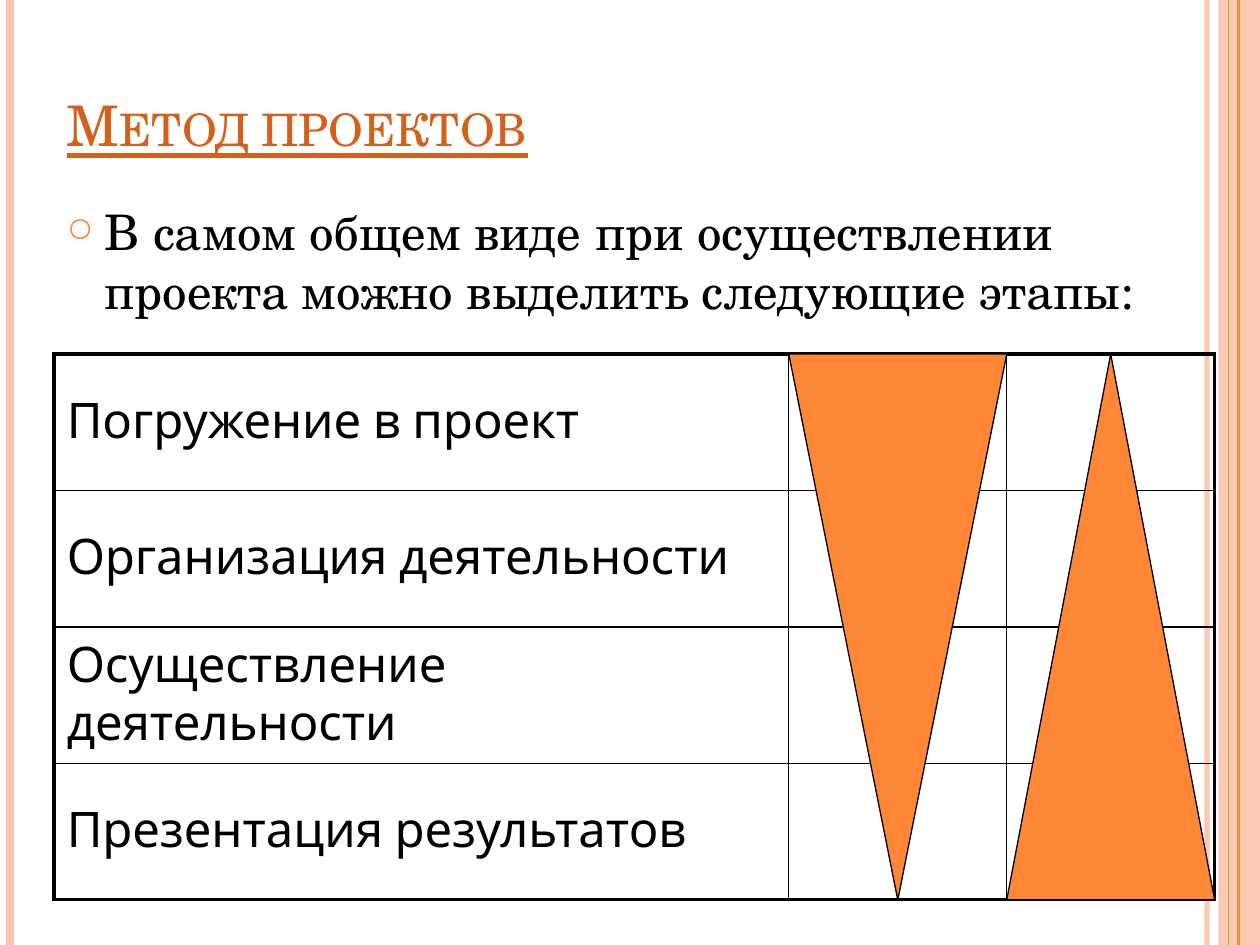
from lxml import etree
from pptx import Presentation
from pptx.dml.color import RGBColor
from pptx.enum.shapes import MSO_CONNECTOR, MSO_SHAPE
from pptx.enum.text import MSO_ANCHOR, PP_ALIGN
from pptx.oxml.ns import qn
from pptx.util import Inches, Pt

STRAIGHT = MSO_CONNECTOR.STRAIGHT
RECTANGLE = MSO_SHAPE.RECTANGLE
TRIANGLE = MSO_SHAPE.ISOSCELES_TRIANGLE
MIDDLE, BOTTOM = MSO_ANCHOR.MIDDLE, MSO_ANCHOR.BOTTOM
LEFT = PP_ALIGN.LEFT

ORANGE = RGBColor(0xFE, 0x86, 0x37)
PEACH = RGBColor(0xFE, 0xC3, 0xAE)
RUST = RGBColor(0xD2, 0x61, 0x1C)
BLACK = RGBColor(0, 0, 0)
SERIF, SANS = "TeX Gyre Schola", "Karla"

SLIDE_WIDTH, SLIDE_HEIGHT = 10, 7.5
STAGES = ["Погружение в проект", "Организация деятельности",
          "Осуществление деятельности", "Презентация результатов"]
TABLE_LEFT, TABLE_TOP = 0.43, 2.81
COLUMN_WIDTHS = [5.83, 1.73, 1.65]
ROW_HEIGHT = 1.083
TABLE_HEIGHT = ROW_HEIGHT * len(STAGES)
OUTER, INNER = 2.25, 1
RAILS = [(9.58, PEACH, 3, 93), (0.08, PEACH, 4.5, 100),
         (9.83, ORANGE, 1.5, 100), (9.75, ORANGE, 0.75, 100)]


def add_xml(parent, tag, **attributes):
    """Append a DrawingML child and return it."""
    child = etree.SubElement(parent, qn(tag))
    for key, value in attributes.items():
        child.set(key, str(value))
    return child


def set_alpha(fill, percent):
    """Make a solid colour partly transparent."""
    for color in fill.iter(qn("a:srgbClr")):
        add_xml(color, "a:alpha", val=percent * 1000)


def write(frame, text, color, **font_format):
    """Write one left-aligned paragraph and return it."""
    frame.word_wrap = True
    paragraph = frame.paragraphs[0]
    paragraph.alignment = LEFT
    run = paragraph.add_run()
    run.text = text
    run.font.color.rgb = color
    for name, value in font_format.items():
        setattr(run.font, name, value)
    return paragraph


def add_rail(slide, x, color, width, opacity):
    """Draw a full-height vertical line at the slide edge."""
    rail = slide.shapes.add_connector(
        STRAIGHT, Inches(x), 0, Inches(x), Inches(SLIDE_HEIGHT))
    rail.line.color.rgb = color
    rail.line.width = Pt(width)
    properties = rail._element.spPr
    add_xml(properties, "a:effectLst")
    if opacity < 100:
        set_alpha(properties, opacity)


def add_filled(slide, kind, left, top, width, height, color):
    """Draw a filled preset shape without shadow."""
    shape = slide.shapes.add_shape(
        kind, Inches(left), Inches(top), Inches(width), Inches(height))
    shape.shadow.inherit = False
    shape.fill.solid()
    shape.fill.fore_color.rgb = color
    return shape


def add_side_band(slide):
    """Draw the translucent band along the right edge."""
    band = add_filled(slide, RECTANGLE, 9.67, 0, 0.33, SLIDE_HEIGHT, PEACH)
    band.line.fill.background()
    set_alpha(band._element.spPr, 87)


def add_wedge(slide, column, rotation):
    """Draw a triangle that fills one table column."""
    left = TABLE_LEFT + sum(COLUMN_WIDTHS[:column])
    wedge = add_filled(slide, TRIANGLE, left, TABLE_TOP,
                       COLUMN_WIDTHS[column], TABLE_HEIGHT, ORANGE)
    wedge.rotation = rotation
    wedge.line.color.rgb = BLACK
    wedge.line.width = Pt(0.75)


def set_title(slide, text):
    """Place and format the title placeholder."""
    title = slide.shapes.title
    box = {"left": 0.43, "top": 0.23, "width": 9.35, "height": 1.07}
    for name, value in box.items():
        setattr(title, name, Inches(value))
    title.text_frame.vertical_anchor = BOTTOM
    paragraph = write(title.text_frame, text, RUST, name=SERIF,
                      size=Pt(32), underline=True)
    paragraph.runs[0].font._element.set("cap", "small")


def add_intro(slide, text):
    """Add the bulleted introduction."""
    intro = slide.shapes.add_textbox(
        Inches(0.43), Inches(1.55), Inches(8.9), Inches(1.34))
    paragraph = write(intro.text_frame, text, BLACK, name=SERIF, size=Pt(28))
    paragraph.space_before = Pt(6)
    properties = paragraph._p.get_or_add_pPr()
    properties.set("marL", str(Inches(0.3)))
    properties.set("indent", str(Inches(-0.3)))
    bullet_color = add_xml(properties, "a:buClr")
    add_xml(bullet_color, "a:srgbClr", val=ORANGE)
    add_xml(properties, "a:buSzPct", val=70000)
    add_xml(properties, "a:buChar", char="○")


def set_borders(cell, widths):
    """Give a cell black borders, with widths by side."""
    properties = cell._tc.get_or_add_tcPr()
    for index, (side, width) in enumerate(widths.items()):
        border = etree.Element(qn(f"a:ln{side}"))
        border.set("w", str(Pt(width)))
        fill = add_xml(border, "a:solidFill")
        add_xml(fill, "a:srgbClr", val=BLACK)
        properties.insert(index, border)


def add_stage_table(slide):
    """Add the table of project stages with a heavy outer frame."""
    table = slide.shapes.add_table(
        len(STAGES), len(COLUMN_WIDTHS), Inches(TABLE_LEFT), Inches(TABLE_TOP),
        Inches(sum(COLUMN_WIDTHS)), Inches(TABLE_HEIGHT)).table
    table.first_row = table.horz_banding = False
    for column, width in zip(table.columns, COLUMN_WIDTHS):
        column.width = Inches(width)
    last_row, last_column = len(STAGES) - 1, len(COLUMN_WIDTHS) - 1
    for r, stage in enumerate(STAGES):
        table.rows[r].height = Inches(ROW_HEIGHT)
        for c in range(len(COLUMN_WIDTHS)):
            cell = table.cell(r, c)
            cell.fill.background()
            cell.vertical_anchor = MIDDLE
            on_frame = {"L": c == 0, "R": c == last_column,
                        "T": r == 0, "B": r == last_row}
            set_borders(cell, {side: OUTER if edge else INNER
                               for side, edge in on_frame.items()})
        stage_text = write(table.cell(r, 0).text_frame, stage, BLACK,
                           name=SANS, size=Pt(28))
        stage_text.space_before = Pt(5.6)


def main():
    """Build and save the slide."""
    deck = Presentation()
    deck.slide_width = Inches(SLIDE_WIDTH)
    deck.slide_height = Inches(SLIDE_HEIGHT)
    slide = deck.slides.add_slide(deck.slide_layouts[5])
    add_side_band(slide)
    for rail in RAILS:
        add_rail(slide, *rail)
    set_title(slide, "Метод проектов")
    add_intro(slide, "В самом общем виде при осуществлении проекта "
                     "можно выделить следующие этапы:")
    add_stage_table(slide)
    add_wedge(slide, 1, 180)
    add_wedge(slide, 2, 0)
    deck.save("out.pptx")


main()
